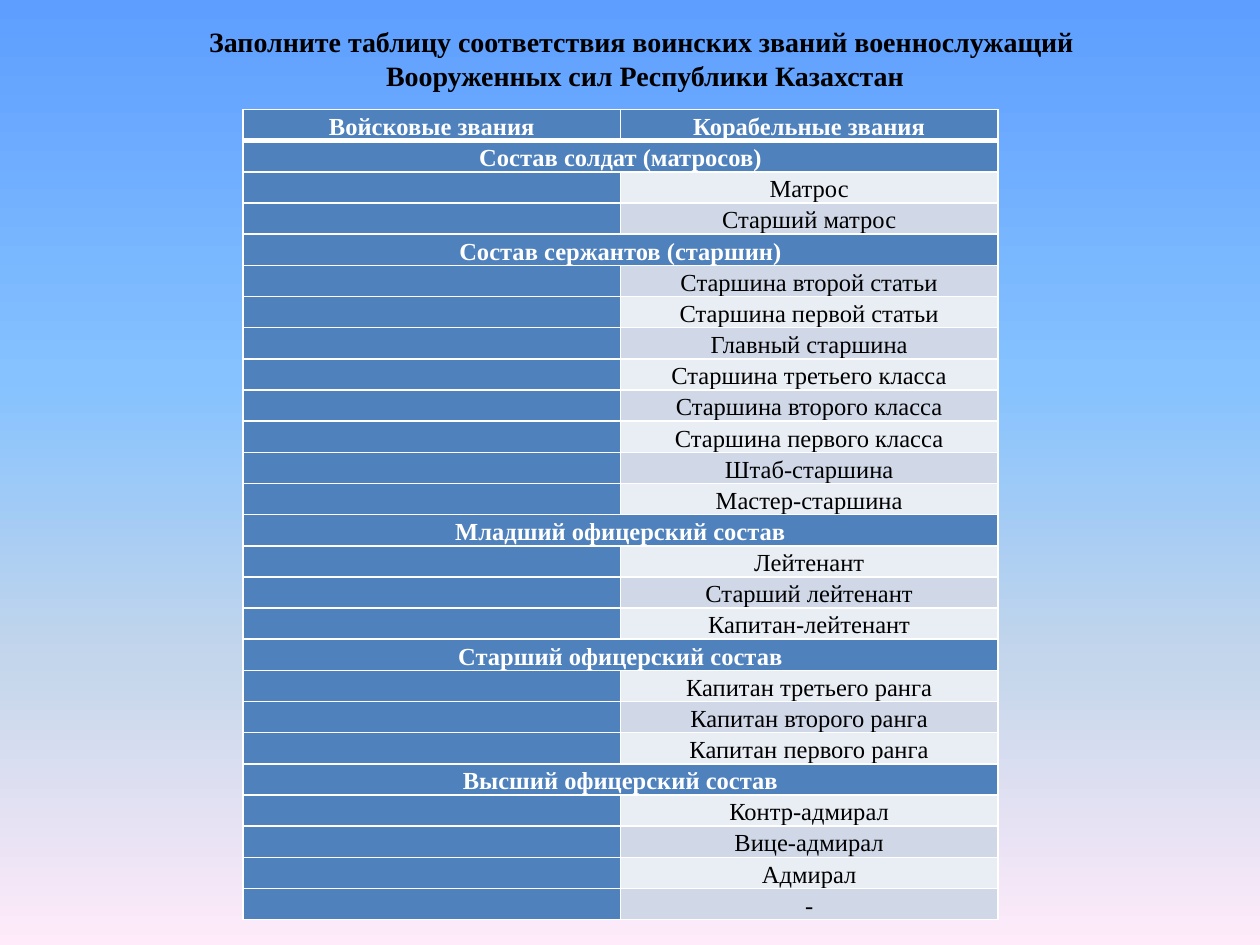
from copy import deepcopy

from lxml import etree
from pptx import Presentation, util as u
from pptx.dml.color import RGBColor
from pptx.enum import text
from pptx.oxml.ns import qn

WHITE = RGBColor(0xFF, 0xFF, 0xFF)
BLACK = RGBColor(0x00, 0x00, 0x00)
BLUE = RGBColor(0x4F, 0x81, 0xBD)
BANDS = [RGBColor(0xE9, 0xED, 0xF4), RGBColor(0xD0, 0xD8, 0xE8)]
SKY = [
    (0, RGBColor(0x5E, 0x9E, 0xFF)),
    (40, RGBColor(0x85, 0xC2, 0xFF)),
    (70, RGBColor(0xC4, 0xD6, 0xEB)),
    (100, RGBColor(0xFF, 0xEB, 0xFA)),
]
FONT = "Times New Roman"
TITLE = [
    "Заполните таблицу соответствия воинских званий военнослужащий ",
    "Вооруженных сил Республики Казахстан",
]
HEADER = ["Войсковые звания", "Корабельные звания"]
RANKS = {
    "Состав солдат (матросов)": ["Матрос", "Старший матрос"],
    "Состав сержантов (старшин)": [
        "Старшина второй статьи", "Старшина первой статьи", "Главный старшина",
        "Старшина третьего класса", "Старшина второго класса",
        "Старшина первого класса", "Штаб-старшина", "Мастер-старшина",
    ],
    "Младший офицерский состав": ["Лейтенант", "Старший лейтенант", "Капитан-лейтенант"],
    "Старший офицерский состав": [
        "Капитан третьего ранга", "Капитан второго ранга", "Капитан первого ранга",
    ],
    "Высший офицерский состав": ["Контр-адмирал", "Вице-адмирал", "Адмирал", "-"],
}


def write(para, words, size, color, bold):
    para.text = words
    para.alignment = text.PP_ALIGN.CENTER
    for span in para.runs:
        span.font.name = FONT
        span.font.size = u.Pt(size)
        span.font.bold = bold
        span.font.color.rgb = color


def draw_borders(cell, widths):
    props = cell._tc.get_or_add_tcPr()
    for place, (side, width) in enumerate(widths.items()):
        line = etree.Element(qn(f"a:ln{side}"), w=str(u.Pt(width)))
        fill = etree.SubElement(line, qn("a:solidFill"))
        etree.SubElement(fill, qn("a:srgbClr"), val=str(WHITE))
        props.insert(place, line)


deck = Presentation()
deck.slide_width = u.Inches(10)
deck.slide_height = u.Inches(7.5)
W, H = deck.slide_width, deck.slide_height
page = deck.slides.add_slide(deck.slide_layouts[6])

sky = page.background.fill
sky.gradient()
sky.gradient_angle = 270
stops = page.element.find(".//" + qn("a:gsLst"))
for _ in range(len(SKY) - len(stops)):
    stops.append(deepcopy(stops[0]))
for stop, (position, color) in zip(sky.gradient_stops, SKY):
    stop.position = position / 100
    stop.color.rgb = color

rows = [HEADER]
for group, ranks in RANKS.items():
    rows.append([group])
    rows += [["", rank] for rank in ranks]

frame = page.shapes.add_table(
    len(rows), 2, int(W * 0.193), int(H * 0.116), int(W * 0.599), int(H * 0.93)
)
table = frame.table
for r, words in enumerate(rows):
    table.rows[r].height = int(H * 0.025)
    heading = r == 0 or len(words) == 1
    for c in range(2):
        cell = table.cell(r, c)
        cell.margin_left = cell.margin_right = u.Inches(0.06)
        cell.margin_top = cell.margin_bottom = 0
        cell.fill.solid()
        blue = heading or c == 0
        cell.fill.fore_color.rgb = BLUE if blue else BANDS[r % 2]
        para = cell.text_frame.paragraphs[0]
        content = words[c] if c < len(words) else ""
        write(para, content, 14, WHITE if blue else BLACK, blue)
        para.line_spacing = 1.15
        if not content:
            etree.SubElement(para._p, qn("a:endParaRPr"), sz="1400")
        draw_borders(cell, {"L": 1, "R": 1, "T": 3 if r == 1 else 1, "B": 3 if r == 0 else 1})
    if len(words) == 1:
        table.cell(r, 0).merge(table.cell(r, 1))

box = page.shapes.add_textbox(int(W * 0.151), int(H * 0.019), int(W * 0.722), int(H * 0.085))
body = box.text_frame
body.word_wrap = False
body.auto_size = text.MSO_AUTO_SIZE.SHAPE_TO_FIT_TEXT
body.vertical_anchor = text.MSO_ANCHOR.MIDDLE
body.text = "\n".join(TITLE)
for para, words in zip(body.paragraphs, TITLE):
    write(para, words, 16, BLACK, True)

deck.save("out.pptx")
